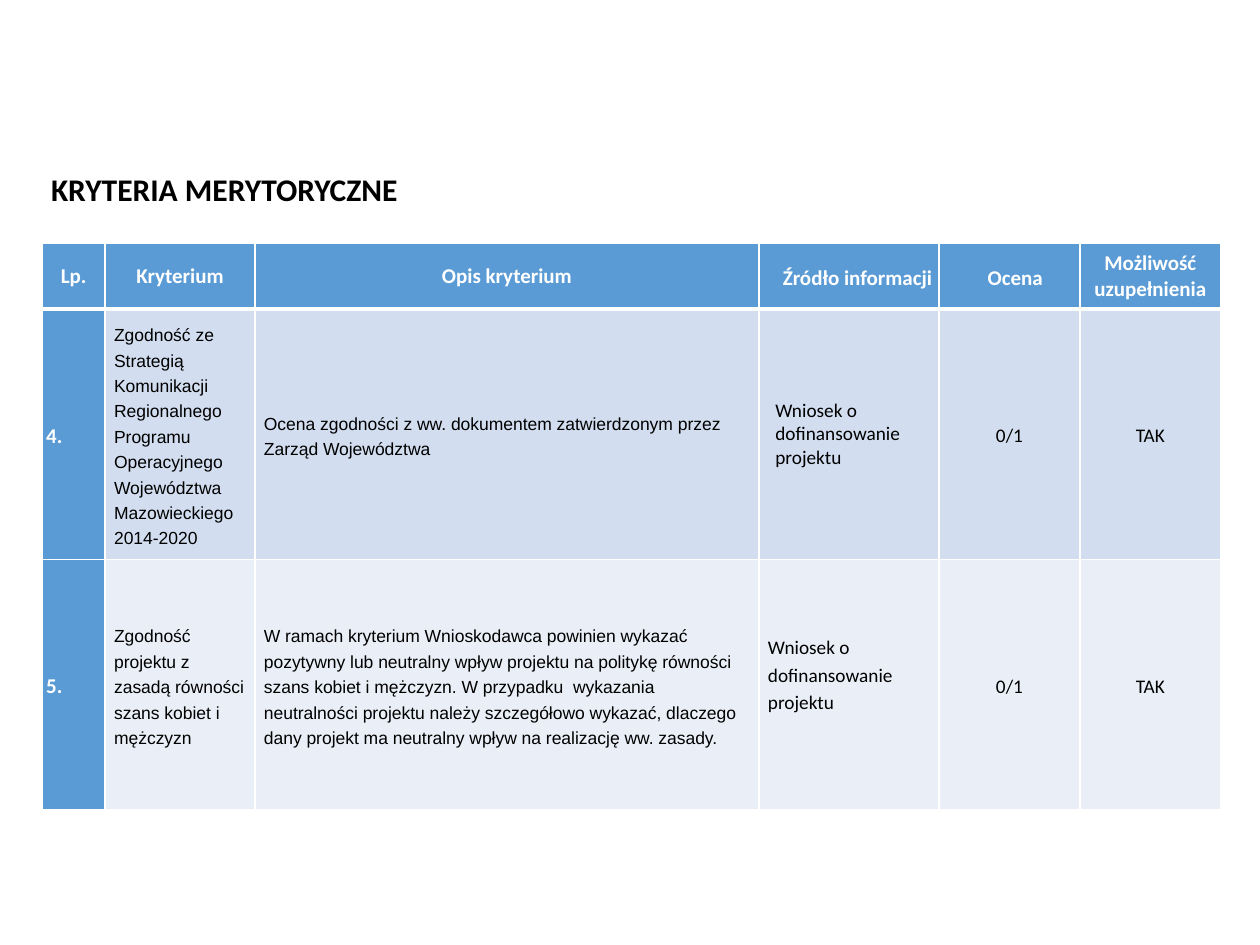
"""Build the slide with the table of merit criteria."""
from lxml import etree
from pptx import Presentation
from pptx import util as u
from pptx.dml.color import RGBColor
from pptx.enum import text
from pptx.oxml.ns import qn

BLUE = RGBColor(0x5B, 0x9B, 0xD5)
MID_BLUE = RGBColor(0xD2, 0xDE, 0xEF)
PALE_BLUE = RGBColor(0xEA, 0xEF, 0xF7)
WHITE = RGBColor(0xFF, 0xFF, 0xFF)
BLACK = RGBColor(0, 0, 0)
ALIGN = text.PP_ALIGN
SIDES = ("left", "right", "top", "bottom")


def set_text(paragraph, words, font_format):
    run = paragraph.add_run()
    run.text = words
    font_format = dict(font_format)
    run.font.color.rgb = font_format.pop("color")
    for attribute, value in font_format.items():
        setattr(run.font, attribute, value)


def set_borders(cell, widths):
    properties = cell._tc.get_or_add_tcPr()
    for side, width in zip("LRTB", widths):
        line = etree.SubElement(properties, qn(f"a:ln{side}"), w=str(u.Pt(width)))
        fill = etree.SubElement(line, qn("a:solidFill"))
        etree.SubElement(fill, qn("a:srgbClr"), val=str(WHITE))


LABEL = {"name": "Calibri", "size": u.Pt(12), "bold": True, "color": WHITE}
DESCRIPTION = {"name": "Arial", "size": u.Pt(10), "bold": False, "color": BLACK}
ANSWER = {"name": "Calibri", "size": u.Pt(11), "bold": False, "color": BLACK}
TITLE = {"name": "Calibri", "size": u.Pt(18), "bold": True, "color": BLACK}

HEADER_STYLE = (LABEL, ALIGN.CENTER, 1, (0.25, 0.25, 0.13, 0.13))
BODY_STYLES = [
    (LABEL, ALIGN.JUSTIFY, 1.15, (0.08, 0.08, 0, 0)),
    (DESCRIPTION, ALIGN.LEFT, 1.3, (0.18, 0.18, 0, 0)),
    (DESCRIPTION, ALIGN.LEFT, 1.3, (0.18, 0.18, 0, 0)),
    (ANSWER, ALIGN.LEFT, 1.15, (0.18, 0.18, 0, 0.45)),
    (ANSWER, ALIGN.CENTER, 1.15, (0.18, 0.18, 0, 0)),
    (ANSWER, ALIGN.CENTER, 1.15, (0.18, 0.18, 0, 0)),
]
SPECIAL_STYLES = {
    (0, 3): (LABEL, ALIGN.LEFT, 1.15, (0, 0, 0, 0)),
    (0, 4): (LABEL, ALIGN.CENTER, 1.15, (0, 0, 0, 0)),
    (1, 3): (ANSWER, ALIGN.LEFT, 1, (0.18, 0.18, 0, 0)),
}
INDENTS = {
    (0, 3): {"marL": 0, "indent": u.Cm(0.48)},
    (0, 4): {"marL": u.Cm(0.23), "indent": 0},
    (1, 3): {"marL": u.Cm(0.15), "indent": 0},
}
CRITERIA = [
    ("Lp.", "Kryterium", "Opis kryterium", "Źródło informacji", "Ocena",
     "Możliwość uzupełnienia"),
    ("4.",
     "Zgodność ze Strategią Komunikacji Regionalnego Programu Operacyjnego "
     "Województwa Mazowieckiego 2014-2020",
     "Ocena zgodności z ww. dokumentem zatwierdzonym przez Zarząd Województwa",
     "Wniosek o dofinansowanie projektu", "0/1", "TAK"),
    ("5.",
     "Zgodność projektu z zasadą równości szans kobiet i mężczyzn",
     "W ramach kryterium Wnioskodawca powinien wykazać pozytywny lub neutralny "
     "wpływ projektu na politykę równości szans kobiet i mężczyzn. W przypadku  "
     "wykazania neutralności projektu należy szczegółowo wykazać, dlaczego dany "
     "projekt ma neutralny wpływ na realizację ww. zasady.",
     "Wniosek o dofinansowanie projektu", "0/1", "TAK"),
]
COLUMN_WIDTHS = (1.27, 3.02, 10.16, 3.63, 2.84, 2.84)
ROW_HEIGHTS = (1.32, 5.05, 5.05)
ROW_FILLS = (BLUE, MID_BLUE, PALE_BLUE)
ROW_BORDERS = ((1, 1, 1, 3), (1, 1, 3, 1), (1, 1, 1, 1))

prs = Presentation()
prs.slide_width, prs.slide_height = u.Cm(25.4), u.Cm(19.05)
slide = prs.slides.add_slide(prs.slide_layouts[6])

heading = slide.shapes.add_textbox(u.Cm(0.78), u.Cm(3.3), u.Cm(8), u.Cm(1.03)).text_frame
heading.word_wrap = False
heading.vertical_anchor = text.MSO_ANCHOR.MIDDLE
set_text(heading.paragraphs[0], "KRYTERIA MERYTORYCZNE", TITLE)

criteria = slide.shapes.add_table(
    len(ROW_HEIGHTS), len(COLUMN_WIDTHS), u.Cm(0.85), u.Cm(4.91),
    u.Cm(sum(COLUMN_WIDTHS)), u.Cm(sum(ROW_HEIGHTS))).table
for column, width in zip(criteria.columns, COLUMN_WIDTHS):
    column.width = u.Cm(width)
for row, height in zip(criteria.rows, ROW_HEIGHTS):
    row.height = u.Cm(height)

for r, entries in enumerate(CRITERIA):
    for c, words in enumerate(entries):
        cell = criteria.cell(r, c)
        default = BODY_STYLES[c] if r else HEADER_STYLE
        font_format, alignment, spacing, margins = SPECIAL_STYLES.get((r, c), default)
        set_borders(cell, ROW_BORDERS[r])
        cell.fill.solid()
        cell.fill.fore_color.rgb = ROW_FILLS[r] if c else BLUE
        cell.vertical_anchor = text.MSO_ANCHOR.MIDDLE
        for side, margin in zip(SIDES, margins):
            setattr(cell, f"margin_{side}", u.Cm(margin))
        paragraph = cell.text_frame.paragraphs[0]
        paragraph.alignment = alignment
        paragraph.line_spacing = spacing
        for name, length in INDENTS.get((r, c), {}).items():
            paragraph._p.get_or_add_pPr().set(name, str(length))
        set_text(paragraph, words, font_format)

prs.save("out.pptx")
